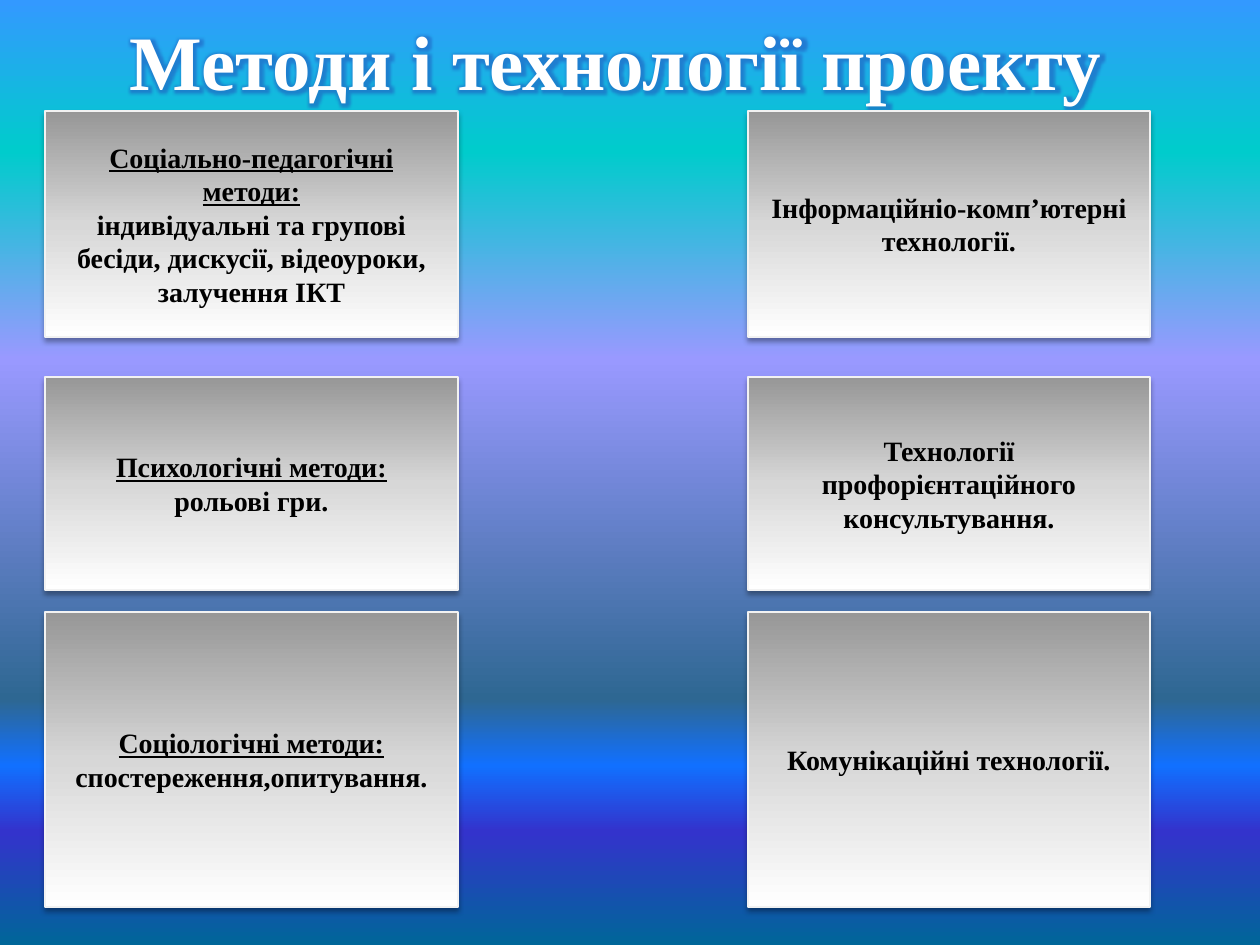
import dataclasses

import lxml.etree
import pptx
import pptx.dml.color
import pptx.enum.shapes
import pptx.enum.text
import pptx.oxml
import pptx.oxml.ns
import pptx.util

PIXELS_PER_INCH = 126
FONT_NAME = "Times New Roman"
BACKGROUND_STOPS = [
    (0, "3399FF"), (16, "00CCCC"), (38, "9999FF"), (74, "2E6792"),
    (81, "1170FF"), (88, "3333CC"), (100, "006699"),
]
CARD_STOPS = [(0, "979797"), (50, "D7D7D7"), (100, "FFFFFF")]
ROWS = [(111, 226), (377, 213), (612, 295)]
COLUMNS = [(45, 413), (748, 402)]


@dataclasses.dataclass
class Card:
    column: int
    row: int
    heading: str
    body: str


CARDS = [
    Card(0, 0, "Соціально-педагогічні методи:\v",
         "індивідуальні та групові бесіди, дискусії, відеоуроки, залучення ІКТ"),
    Card(0, 1, "Психологічні методи:\v", "рольові гри."),
    Card(0, 2, "Соціологічні методи: ", "спостереження,опитування."),
    Card(1, 0, "", "Інформаційніо-комп’ютерні технології."),
    Card(1, 1, "", "Технології профорієнтаційного консультування."),
    Card(1, 2, "", "Комунікаційні технології."),
]


def px(value: int) -> int:
    return round(value * pptx.util.Inches(1) / PIXELS_PER_INCH)


def color(value: str) -> pptx.dml.color.RGBColor:
    return pptx.dml.color.RGBColor.from_string(value)


def drawing_element(xml: str):
    namespace = pptx.oxml.ns.nsdecls("a")
    return pptx.oxml.parse_xml(xml.replace(">", f" {namespace}>", 1))


def set_gradient(fill, owner, stops: list) -> None:
    fill.gradient()
    gradient = owner.xpath(".//a:gradFill")[0]
    for child in list(gradient):
        gradient.remove(child)
    stop_list = "".join(
        f'<a:gs pos="{position * 1000}"><a:srgbClr val="{value}"/></a:gs>'
        for position, value in stops
    )
    gradient.append(drawing_element(f"<a:gsLst>{stop_list}</a:gsLst>"))
    direction = lxml.etree.SubElement(gradient, pptx.oxml.ns.qn("a:lin"))
    direction.set("ang", "5400000")
    direction.set("scaled", "0")


def prepare_paragraph(shape):
    frame = shape.text_frame
    frame.word_wrap = True
    frame.vertical_anchor = pptx.enum.text.MSO_ANCHOR.MIDDLE
    paragraph = frame.paragraphs[0]
    paragraph.alignment = pptx.enum.text.PP_ALIGN.CENTER
    return paragraph


def add_run(paragraph, text: str, size: int, text_color: str, underline: bool = False):
    run = paragraph.add_run()
    run.text = text
    formats = {"name": FONT_NAME, "size": pptx.util.Pt(size),
               "bold": True, "underline": underline}
    for name, value in formats.items():
        setattr(run.font, name, value)
    run.font.color.rgb = color(text_color)
    return run


def add_title(slide, text: str) -> None:
    shape = slide.shapes.add_textbox(px(49), px(1), px(1134), px(118))
    run = add_run(prepare_paragraph(shape), text, 44, "FFFFFF")
    glow = drawing_element(
        '<a:effectLst><a:glow rad="101600"><a:srgbClr val="1F5FBF">'
        '<a:alpha val="60000"/></a:srgbClr></a:glow></a:effectLst>'
    )
    run.font._element.xpath("./a:solidFill")[0].addnext(glow)


def add_card(slide, card: Card) -> None:
    left, width = COLUMNS[card.column]
    top, height = ROWS[card.row]
    shape = slide.shapes.add_shape(
        pptx.enum.shapes.MSO_SHAPE.RECTANGLE, px(left), px(top), px(width), px(height)
    )
    properties = shape._element.spPr
    set_gradient(shape.fill, properties, CARD_STOPS)
    shape.line.color.rgb = color("F2F2F2")
    shape.line.width = pptx.util.Pt(0.75)
    shape.shadow.inherit = False
    properties.xpath("./a:effectLst")[0].append(drawing_element(
        f'<a:outerShdw blurRad="{pptx.util.Pt(3.1)}" dist="{pptx.util.Pt(1.8)}" '
        'dir="5400000" rotWithShape="0"><a:srgbClr val="000000">'
        '<a:alpha val="35000"/></a:srgbClr></a:outerShdw>'
    ))
    paragraph = prepare_paragraph(shape)
    heading = card.heading.rstrip("\v")
    if heading:
        add_run(paragraph, heading, 16, "000000", True)
    if heading != card.heading:
        paragraph.add_line_break()
    add_run(paragraph, card.body, 16, "000000")


def main() -> None:
    presentation = pptx.Presentation()
    presentation.slide_width = px(1260)
    presentation.slide_height = px(945)
    slide = presentation.slides.add_slide(presentation.slide_layouts[6])
    set_gradient(slide.background.fill, slide._element, BACKGROUND_STOPS)
    add_title(slide, "Методи і технології проекту")
    for card in CARDS:
        add_card(slide, card)
    presentation.save("out.pptx")


if __name__ == "__main__":
    main()
